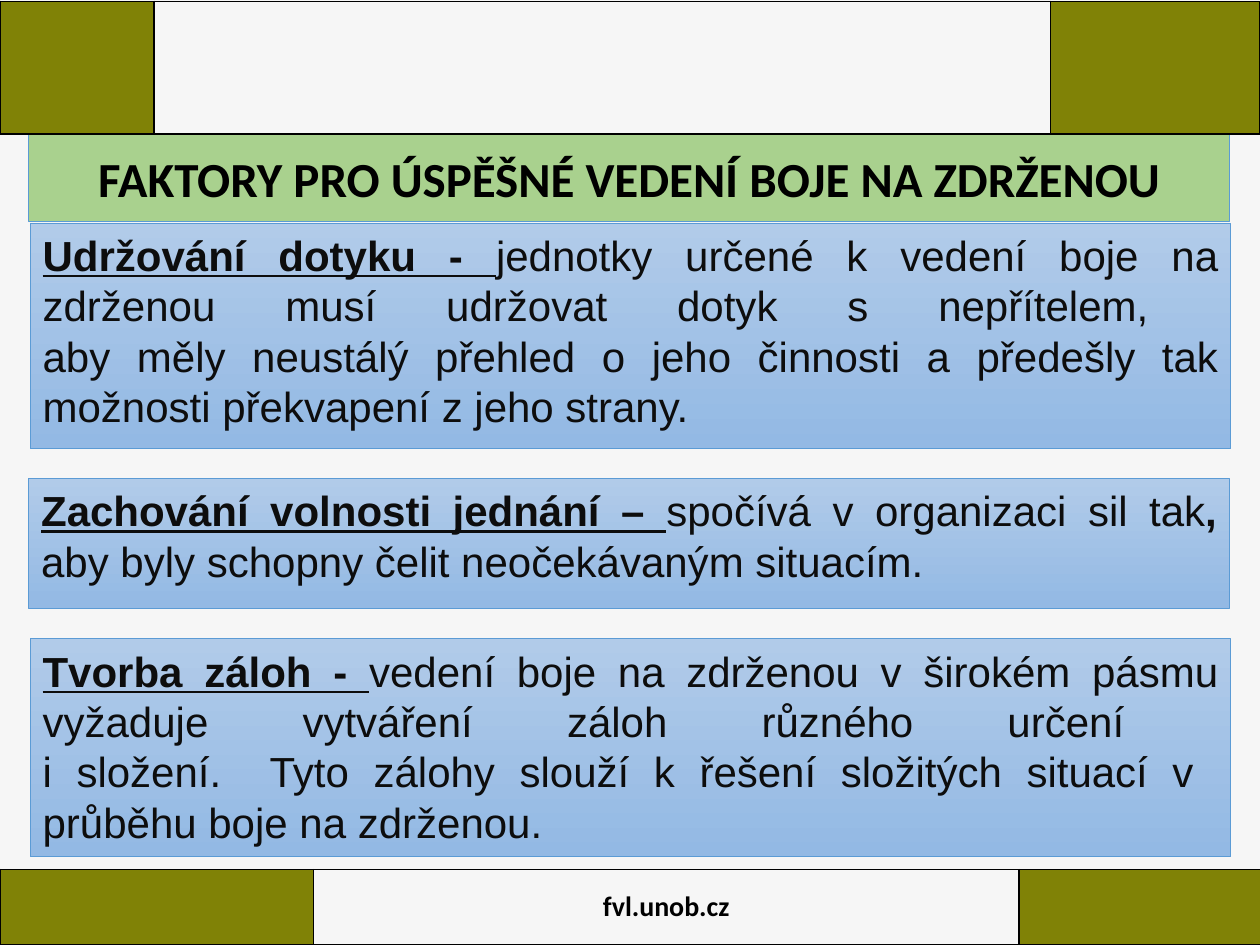
from dataclasses import dataclass

from lxml import etree
from pptx import Presentation
from pptx.dml.color import RGBColor
from pptx.enum import shapes, text
from pptx.oxml import ns
from pptx.slide import Slide
from pptx import util as u

COLORS = {
    "background": "F6F6F6",
    "olive": "808206",
    "black": "000000",
    "ink": "0D0D0D",
    "green": "A9D18E",
    "outline": "5B9BD5",
    "blue_top": "B1CBE9",
    "blue_bottom": "93B9E4",
}


@dataclass
class Band:
    top: float
    height: float
    columns: tuple[float, ...]
    label: str = ""


@dataclass
class Factor:
    left: float
    top: float
    height: float
    heading: str
    spans: tuple[tuple[str, bool], ...]


BANDS = [
    Band(17.53, 1.52, (6.32, 14.22, 4.88), "fvl.unob.cz"),
    Band(0.03, 2.67, (3.1, 18.08, 4.22)),
]
PANEL_WIDTH = 24.2
FACTORS = [
    Factor(0.61, 4.5, 4.55, "Udržování dotyku - ", (
        ("jednotky určené k vedení boje na zdrženou musí udržovat dotyk s nepřítelem, \n"
         "aby měly neustálý přehled o jeho činnosti a předešly tak možnosti překvapení "
         "z jeho strany.", False),
    )),
    Factor(0.58, 9.65, 2.62, "Zachování volnosti jednání – ", (
        ("spočívá v organizaci sil tak", False),
        (",", True),
        (" aby byly schopny čelit neočekávaným situacím.", False),
    )),
    Factor(0.61, 12.88, 4.39, "Tvorba záloh - ", (
        ("vedení boje na zdrženou v širokém pásmu vyžaduje vytváření záloh různého určení \n"
         "i složení.  Tyto zálohy slouží k řešení složitých situací v  průběhu boje "
         "na zdrženou.", False),
    )),
]


def color(name: str) -> RGBColor:
    return RGBColor.from_string(COLORS[name])


def add_text(para, content: str, *, size: float, font: str, ink: str = "black",
             bold: bool = False, underline: bool = False) -> None:
    for index, line in enumerate(content.split("\n")):
        if index:
            para.add_line_break()
        span = para.add_run()
        span.text = line
        span.font.size = u.Pt(size)
        span.font.name = font
        span.font.bold = bold
        span.font.underline = underline
        span.font.color.rgb = color(ink)


def add_borders(cell) -> None:
    properties = cell._tc.get_or_add_tcPr()
    for position, side in enumerate(("lnL", "lnR", "lnT", "lnB")):
        line = etree.Element(ns.qn(f"a:{side}"), w=str(u.Pt(1)))
        fill = etree.SubElement(line, ns.qn("a:solidFill"))
        etree.SubElement(fill, ns.qn("a:srgbClr"), val=COLORS["black"])
        properties.insert(position, line)


def draw_band(slide: Slide, band: Band) -> None:
    frame = slide.shapes.add_table(1, len(band.columns), 0, u.Cm(band.top),
                                   u.Cm(sum(band.columns)), u.Cm(band.height))
    table = frame.table
    table.first_row = table.horz_banding = False
    for index, width in enumerate(band.columns):
        table.columns[index].width = u.Cm(width)
        cell = table.cell(0, index)
        if index == 1:
            cell.fill.background()
        else:
            cell.fill.solid()
            cell.fill.fore_color.rgb = color("olive")
        add_borders(cell)
    if band.label:
        middle = table.cell(0, 1)
        middle.vertical_anchor = text.MSO_ANCHOR.MIDDLE
        para = middle.text_frame.paragraphs[0]
        para.alignment = text.PP_ALIGN.CENTER
        add_text(para, band.label, size=16, font="Calibri", bold=True)


def outline(box) -> None:
    box.line.color.rgb = color("outline")
    box.line.width = u.Pt(0.5)


def draw_title(slide: Slide, content: str) -> None:
    title = slide.shapes.title
    title.left, title.top = u.Cm(0.58), u.Cm(2.72)
    title.width, title.height = u.Cm(PANEL_WIDTH), u.Cm(1.75)
    title.fill.solid()
    title.fill.fore_color.rgb = color("green")
    outline(title)
    frame = title.text_frame
    frame.auto_size = text.MSO_AUTO_SIZE.NONE
    frame.vertical_anchor = text.MSO_ANCHOR.MIDDLE
    para = frame.paragraphs[0]
    para.alignment = text.PP_ALIGN.CENTER
    add_text(para, content, size=28, font="Calibri", bold=True)


def draw_factor(slide: Slide, factor: Factor) -> None:
    box = slide.shapes.add_shape(shapes.MSO_SHAPE.RECTANGLE, u.Cm(factor.left),
                                 u.Cm(factor.top), u.Cm(PANEL_WIDTH), u.Cm(factor.height))
    box.shadow.inherit = False
    box.fill.gradient()
    box.fill.gradient_angle = 270
    for stop, position, name in zip(box.fill.gradient_stops, (0, 1),
                                    ("blue_top", "blue_bottom")):
        stop.position = position
        stop.color.rgb = color(name)
    outline(box)
    frame = box.text_frame
    frame.word_wrap = True
    frame.vertical_anchor = text.MSO_ANCHOR.TOP
    para = frame.paragraphs[0]
    para.alignment = text.PP_ALIGN.JUSTIFY
    style = {"size": 24, "font": "Arial", "ink": "ink"}
    add_text(para, factor.heading, bold=True, underline=True, **style)
    for content, bold in factor.spans:
        add_text(para, content, bold=bold, **style)


def main() -> None:
    deck = Presentation()
    deck.slide_width, deck.slide_height = u.Cm(25.4), u.Cm(19.05)
    slide = deck.slides.add_slide(deck.slide_layouts.get_by_name("Title Only"))
    slide.background.fill.solid()
    slide.background.fill.fore_color.rgb = color("background")
    for band in BANDS:
        draw_band(slide, band)
    draw_title(slide, "FAKTORY PRO ÚSPĚŠNÉ VEDENÍ BOJE NA ZDRŽENOU")
    for factor in FACTORS:
        draw_factor(slide, factor)
    deck.save("out.pptx")


if __name__ == "__main__":
    main()
